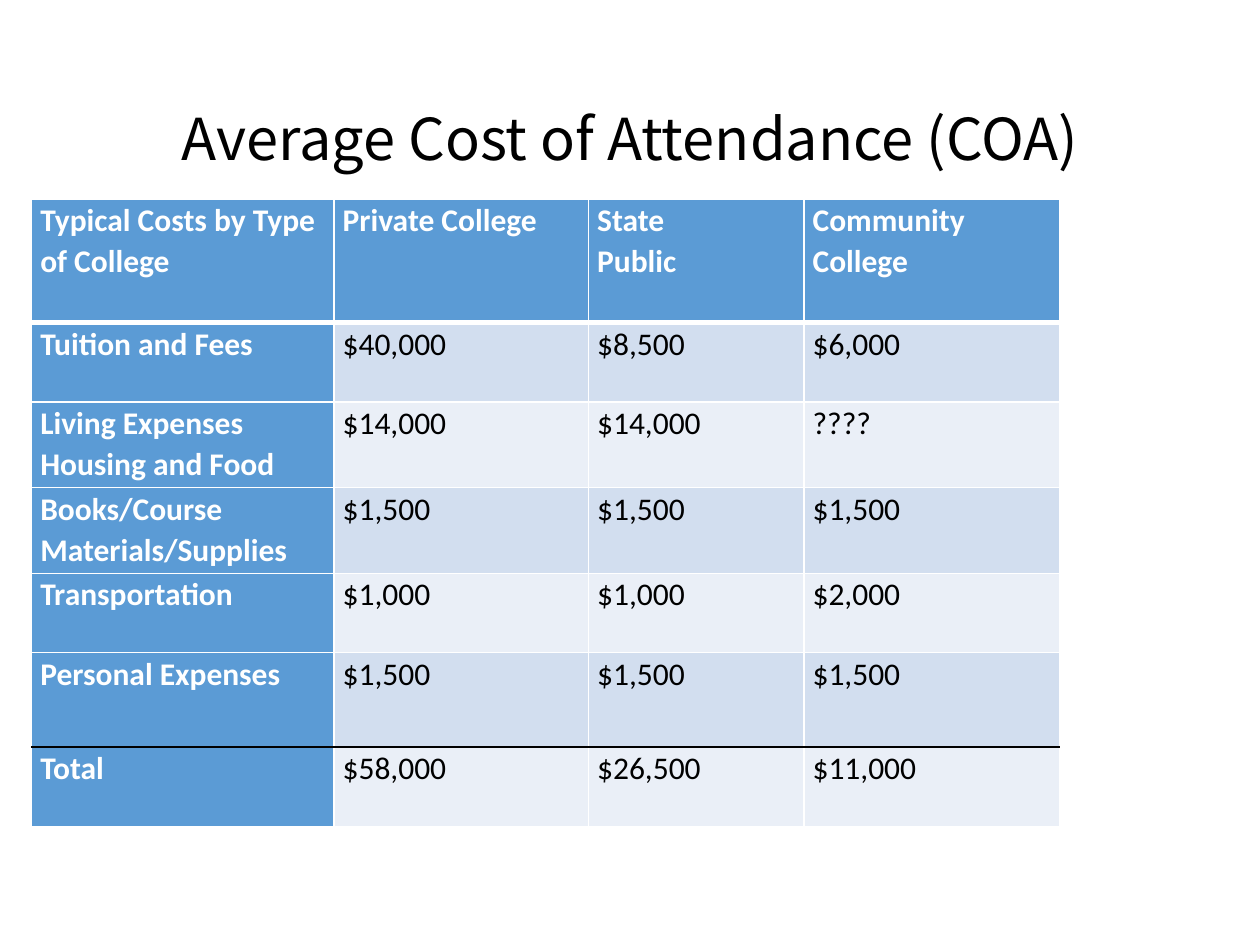
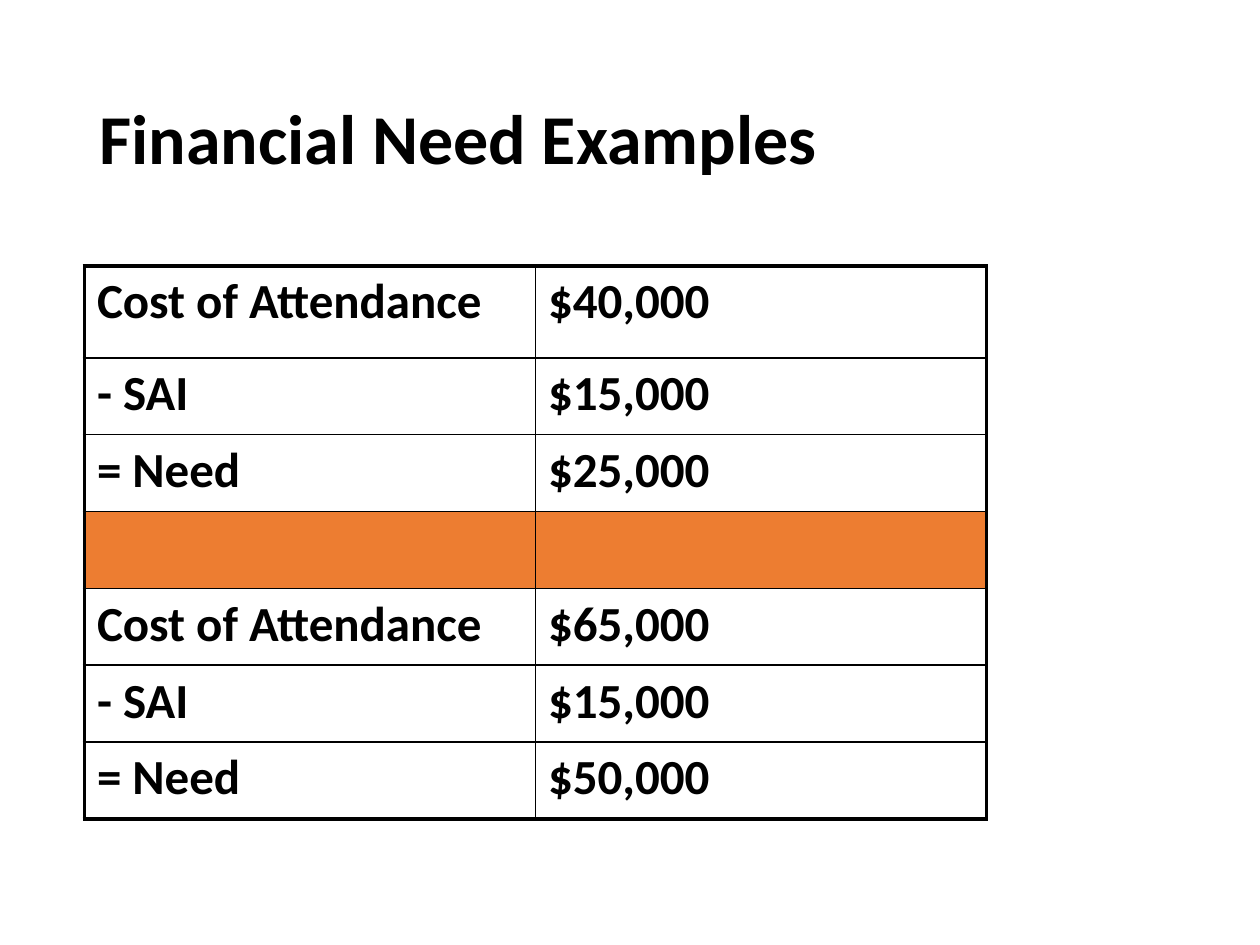
"""Build two slides on the cost of college and financial need."""
from dataclasses import dataclass
from typing import Optional

from lxml.etree import SubElement as Sub
from pptx import Presentation
from pptx.dml.color import RGBColor as RGB
from pptx.enum.text import MSO_ANCHOR as Anchor, MSO_AUTO_SIZE as Fit, PP_ALIGN as Align
from pptx.oxml.ns import qn
from pptx.slide import Slide
from pptx.table import _Cell as Cell
from pptx.util import Inches, Pt

WHITE = RGB(0xFF, 0xFF, 0xFF)
BLACK = RGB(0x00, 0x00, 0x00)
BLUE = RGB(0x5B, 0x9B, 0xD5)
DARK_BAND = RGB(0xD2, 0xDE, 0xEF)
PALE_BAND = RGB(0xEA, 0xEF, 0xF7)
ORANGE = RGB(0xED, 0x7D, 0x31)
BODY = "Calibri"
WIDE = "Noto Sans CJK SC"


@dataclass(frozen=True)
class Title:
    """Wording and style of a slide title."""
    text: str
    font: str
    size: float
    bold: bool
    align: Align


@dataclass(frozen=True)
class Rule:
    """Colour and width in points of a table line."""
    color: RGB
    width: float


@dataclass(frozen=True)
class Look:
    """Fill and text style of a cell."""
    fill: Optional[RGB]
    ink: RGB
    bold: bool


@dataclass(frozen=True)
class Grid:
    """Content, sizes and lines of a table."""
    left: float
    top: float
    cols: list[float]
    rows: list[float]
    cells: list[list[str]]
    looks: list[list[Look]]
    across: list[Rule]
    down: list[Rule]
    size: float
    inset: tuple[float, float]
    line: Optional[float] = None
    before: Optional[int] = None


THIN = Rule(WHITE, 1)
FINE = Rule(BLACK, 1)
BOLD = Rule(BLACK, 2.25)
HEAD = Look(BLUE, WHITE, True)
BANDS = [Look(PALE_BAND, BLACK, False), Look(DARK_BAND, BLACK, False)]
PLAIN = Look(None, BLACK, True)
BREAK = Look(ORANGE, BLACK, True)

COSTS = [
    ["Typical Costs by Type of College", "Private College", "State\nPublic", "Community College"],
    ["Tuition and Fees", "$40,000", "$8,500", "$6,000"],
    ["Living Expenses Housing and Food", "$14,000", "$14,000", "????"],
    ["Books/Course Materials/Supplies", "$1,500", "$1,500", "$1,500"],
    ["Transportation", "$1,000", "$1,000", "$2,000"],
    ["Personal Expenses", "$1,500", "$1,500", "$1,500"],
    ["Total", "$58,000", "$26,500", "$11,000"],
]
NEEDS = [
    ["Cost of Attendance", "$40,000"],
    ["- SAI", "$15,000"],
    ["= Need", "$25,000"],
    ["", ""],
    ["Cost of Attendance", "$65,000"],
    ["- SAI", "$15,000"],
    ["= Need", "$50,000"],
]

COST_GRID = Grid(
    left=0.25, top=1.58,
    cols=[2.4, 2.02, 1.71, 2.03],
    rows=[0.98, 0.63, 0.68, 0.68, 0.63, 0.75, 0.63],
    cells=COSTS,
    looks=[[HEAD] * 4] + [[HEAD] + [BANDS[row % 2]] * 3 for row in range(1, len(COSTS))],
    across=[THIN, Rule(WHITE, 3)] + [THIN] * 4 + [FINE, THIN],
    down=[THIN] * 5,
    size=18, inset=(0.07, 0), line=1.07,
)
NEED_GRID = Grid(
    left=0.67, top=2.11,
    cols=[3.58] * 2,
    rows=[0.73] + [0.61] * 6,
    cells=NEEDS,
    looks=[[PLAIN if row[0] else BREAK] * 2 for row in NEEDS],
    across=[BOLD] + [FINE] * 6 + [BOLD],
    down=[BOLD, FINE, BOLD],
    size=28, inset=(0.1, 0.05), before=20,
)
PAGES = [
    (Title("Average Cost of Attendance (COA)", WIDE, 33, False, Align.CENTER), COST_GRID),
    (Title("Financial Need Examples", BODY, 40, True, Align.LEFT), NEED_GRID),
]


def draw_title(slide: Slide, title: Title) -> None:
    """Place and format the title."""
    shape = slide.shapes.title
    shape.left, shape.top = Inches(0.69), Inches(0.4)
    shape.width, shape.height = Inches(8.62), Inches(1.45)
    frame = shape.text_frame
    frame.text = title.text
    frame.word_wrap = True
    frame.auto_size = Fit.NONE
    frame.vertical_anchor = Anchor.MIDDLE
    para = frame.paragraphs[0]
    para.alignment = title.align
    para.line_spacing = 0.9
    font = para.runs[0].font
    font.name, font.size, font.bold = title.font, Pt(title.size), title.bold
    font.color.rgb = BLACK


def draw_edge(cell: Cell, side: str, rule: Rule) -> None:
    """Draw one side of a cell."""
    props = cell._tc.get_or_add_tcPr()
    edge = Sub(props, qn(f"a:ln{side}"), w=str(Pt(rule.width)))
    fill = Sub(edge, qn("a:solidFill"))
    Sub(fill, qn("a:srgbClr"), val=str(rule.color))


def draw_text(cell: Cell, text: str, look: Look, grid: Grid) -> None:
    """Write and format the text of a cell."""
    side, end = map(Inches, grid.inset)
    cell.margin_left = cell.margin_right = side
    cell.margin_top = cell.margin_bottom = end
    cell.text_frame.text = text
    for para in cell.text_frame.paragraphs:
        para.line_spacing = grid.line
        if grid.before:
            space = Sub(para._p.get_or_add_pPr(), qn("a:spcBef"))
            Sub(space, qn("a:spcPct"), val=str(grid.before * 1000))
        for run in para.runs:
            font = run.font
            font.name, font.size, font.bold = BODY, Pt(grid.size), look.bold
            font.color.rgb = look.ink


def draw_cell(cell: Cell, row: int, col: int, grid: Grid) -> None:
    """Draw the text, lines and fill of a cell."""
    look = grid.looks[row][col]
    draw_text(cell, grid.cells[row][col], look, grid)
    draw_edge(cell, "L", grid.down[col])
    draw_edge(cell, "R", grid.down[col + 1])
    draw_edge(cell, "T", grid.across[row])
    draw_edge(cell, "B", grid.across[row + 1])
    if look.fill is None:
        cell.fill.background()
    else:
        cell.fill.solid()
        cell.fill.fore_color.rgb = look.fill


def draw_grid(slide: Slide, grid: Grid) -> None:
    """Add a table and draw its cells."""
    table = slide.shapes.add_table(
        len(grid.rows), len(grid.cols), Inches(grid.left), Inches(grid.top),
        Inches(sum(grid.cols)), Inches(sum(grid.rows))).table
    table.first_row = table.horz_banding = False
    for col, width in enumerate(grid.cols):
        table.columns[col].width = Inches(width)
    for row, height in enumerate(grid.rows):
        table.rows[row].height = Inches(height)
        for col in range(len(grid.cols)):
            draw_cell(table.cell(row, col), row, col, grid)


def main() -> None:
    """Build and save the slides."""
    deck = Presentation()
    deck.slide_width, deck.slide_height = Inches(10), Inches(7.5)
    for title, grid in PAGES:
        slide = deck.slides.add_slide(deck.slide_layouts[5])
        draw_title(slide, title)
        draw_grid(slide, grid)
    deck.save("out.pptx")


if __name__ == "__main__":
    main()
